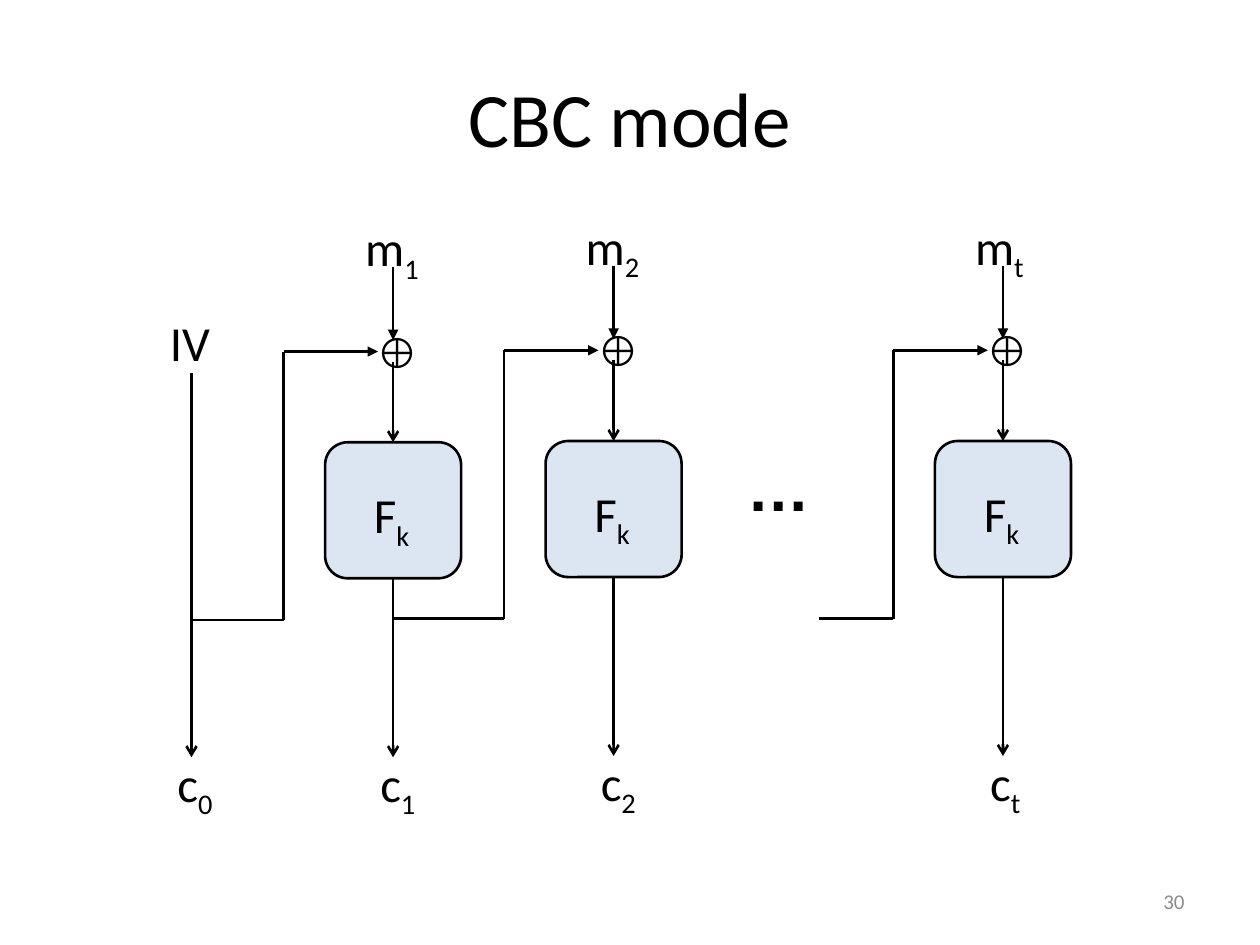
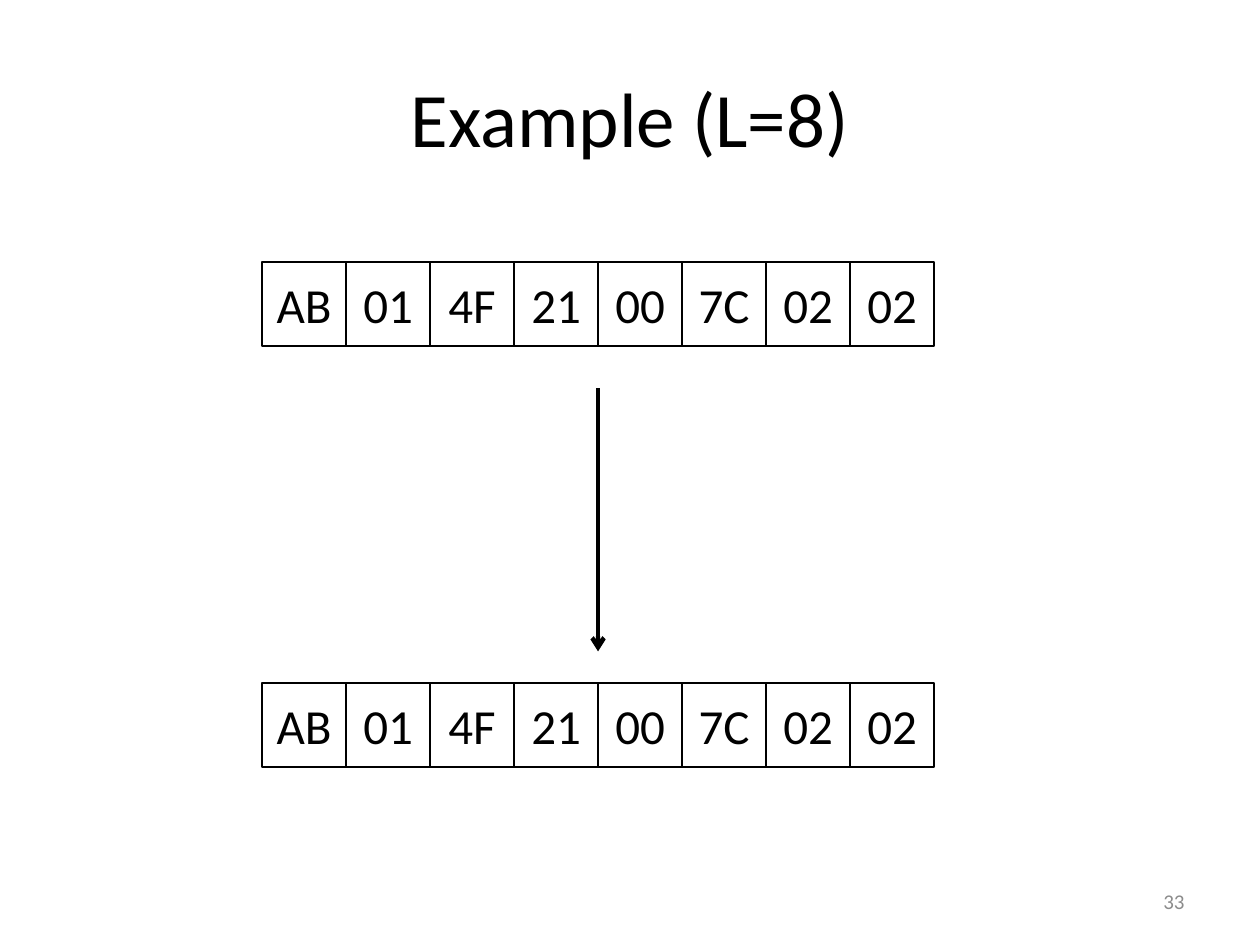
import pptx
import pptx.dml.color
import pptx.enum.shapes
import pptx.enum.text
import pptx.util
from lxml import etree

Inches = pptx.util.Inches
Pt = pptx.util.Pt
hex_color = pptx.dml.color.RGBColor.from_string
Shape = pptx.enum.shapes.MSO_SHAPE
Align = pptx.enum.text.PP_ALIGN
Anchor = pptx.enum.text.MSO_ANCHOR
AutoSize = pptx.enum.text.MSO_AUTO_SIZE

INK = "000000"
BLOCK_FILL = "DCE6F2"
PAGE_GREY = "8C8C8C"
DRAWING_NS = "http://schemas.openxmlformats.org/drawingml/2006/main"

TITLE = {"size": Pt(44), "name": "Calibri"}
LABEL = {"size": Pt(28), "name": "Calibri"}
XOR = {"size": Pt(24), "name": "Arial"}
DOTS = {"size": Pt(36), "name": "Arial", "bold": True}
PAGE = {"size": Pt(12), "name": "Calibri"}

FREE = {"word_wrap": False, "auto_size": AutoSize.SHAPE_TO_FIT_TEXT}
MIDDLE = {"word_wrap": True, "vertical_anchor": Anchor.MIDDLE}


def write(shape, text, style, frame, subscript="", align=None, color=INK):
    """Put text, with an optional subscript run, into a shape."""
    for attribute, value in frame.items():
        setattr(shape.text_frame, attribute, value)
    paragraph = shape.text_frame.paragraphs[0]
    paragraph.alignment = align
    for part in filter(None, (text, subscript)):
        run = paragraph.add_run()
        run.text = part
        for attribute, value in style.items():
            setattr(run.font, attribute, value)
        run.font.color.rgb = hex_color(color)
    if subscript:
        run.font._element.set("baseline", "-25000")


def draw_line(slide, x1, y1, x2, y2, arrow=None, width=1.5):
    line = slide.shapes.add_connector(
        pptx.enum.shapes.MSO_CONNECTOR.STRAIGHT,
        Inches(x1), Inches(y1), Inches(x2), Inches(y2))
    line.line.color.rgb = hex_color(INK)
    line.line.width = Pt(width)
    if arrow:
        outline = line.line._get_or_add_ln()
        etree.SubElement(outline, f"{{{DRAWING_NS}}}tailEnd", type=arrow)
    etree.SubElement(line._element.spPr, f"{{{DRAWING_NS}}}effectLst")
    return line


deck = pptx.Presentation()
deck.slide_width, deck.slide_height = Inches(10), Inches(7.5)

# Shared title and page number
slides = []
for heading, page in (("CBC mode", "30"), ("Example (L=8)", "33")):
    slide = deck.slides.add_slide(deck.slide_layouts[5])
    title = slide.shapes.title
    title.left, title.top = Inches(0.5), Inches(0.3)
    title.width, title.height = Inches(9), Inches(1.25)
    write(title, heading, TITLE, MIDDLE, align=Align.CENTER)
    page_number = slide.shapes.add_textbox(
        Inches(7.17), Inches(6.95), Inches(2.33), Inches(0.4))
    write(page_number, page, PAGE, MIDDLE, align=Align.RIGHT, color=PAGE_GREY)
    slides.append(slide)
cbc, example = slides

# CBC mode: the initial vector, then one chain of parts per block
block_side = 1.08
iv_x = 1.52
draw_line(cbc, iv_x, 2.96, iv_x, 6.01, "arrow")
labels = [
    ("IV", "", LABEL, 1.25, 2.43, 0.52, 0.57),
    ("c", "0", LABEL, 1.31, 5.93, 0.5, 0.57),
    ("…", "", DOTS, 5.83, 3.51, 0.71, 0.71),
]

# index, centre, start of the feedback line, vertical shift, label widths
chain = [
    ("1", 3.12, iv_x, 0.01, 0.65, 0.5),
    ("2", 4.87, 3.12, 0, 0.65, 0.5),
    ("t", 7.96, 6.5, 0, 0.6, 0.46),
]
for index, center, feedback_x, shift, message_width, cipher_width in chain:
    block = cbc.shapes.add_shape(
        Shape.ROUNDED_RECTANGLE, Inches(center - block_side / 2),
        Inches(3.5 + shift), Inches(block_side), Inches(block_side))
    block.shadow.inherit = False
    block.fill.solid()
    block.fill.fore_color.rgb = hex_color(BLOCK_FILL)
    block.line.color.rgb = hex_color(INK)
    block.line.width = Pt(1.5)

    draw_line(cbc, center, 2.11 + shift, center, 2.69 + shift, "triangle")
    draw_line(cbc, center, 2.86 + shift, center, 3.5 + shift,
              "arrow").end_connect(block, 0)
    draw_line(cbc, center, 4.58 + shift, center, 6 + shift,
              "arrow").begin_connect(block, 2)

    bend = center - 0.87
    feedback_y, xor_y = 4.91 + shift, 2.78 + shift
    draw_line(cbc, feedback_x, feedback_y, bend, feedback_y)
    draw_line(cbc, bend, feedback_y, bend, xor_y)
    draw_line(cbc, bend, xor_y, center - 0.12, xor_y, "triangle")

    labels += [
        ("m", index, LABEL, center - 0.32, 1.67 + shift, message_width, 0.57),
        ("⊕", "", XOR, center - 0.23, 2.53 + shift, 0.46, 0.51),
        ("F", "k", LABEL, center - 0.25, 3.79 + shift, 0.5, 0.57),
        ("c", index, LABEL, center - 0.2, 5.92 + shift, cipher_width, 0.57),
    ]

for text, subscript, style, *place in labels:
    label = cbc.shapes.add_textbox(*map(Inches, place))
    write(label, text, style, FREE, subscript)

# Example: the same eight bytes before and after
byte_values = ["AB", "01", "4F", "21", "00", "7C", "02", "02"]
cell_side = 2 / 3
row_left = 2.08
for row_top in (2.08, 5.42):
    for column, value in enumerate(byte_values):
        cell = example.shapes.add_shape(
            Shape.RECTANGLE, Inches(row_left + column * cell_side),
            Inches(row_top), Inches(cell_side), Inches(cell_side))
        cell.shadow.inherit = False
        cell.fill.background()
        cell.line.color.rgb = hex_color(INK)
        cell.line.width = Pt(1.5)
        write(cell, value, LABEL, MIDDLE, align=Align.CENTER)

row_center = row_left + len(byte_values) * cell_side / 2
draw_line(example, row_center, 3.08, row_center, 5.17, "arrow", 2.5)

deck.save("out.pptx")
